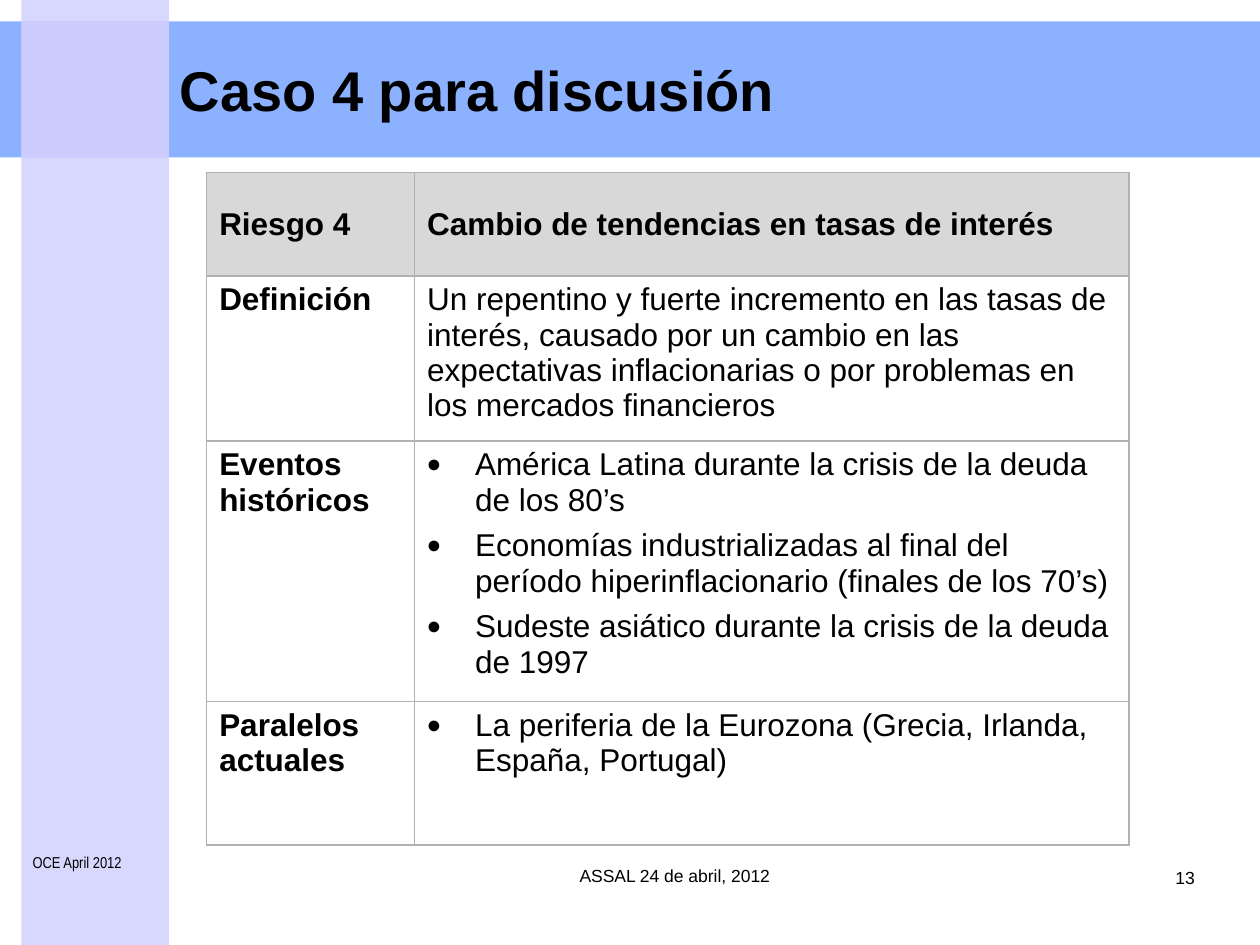
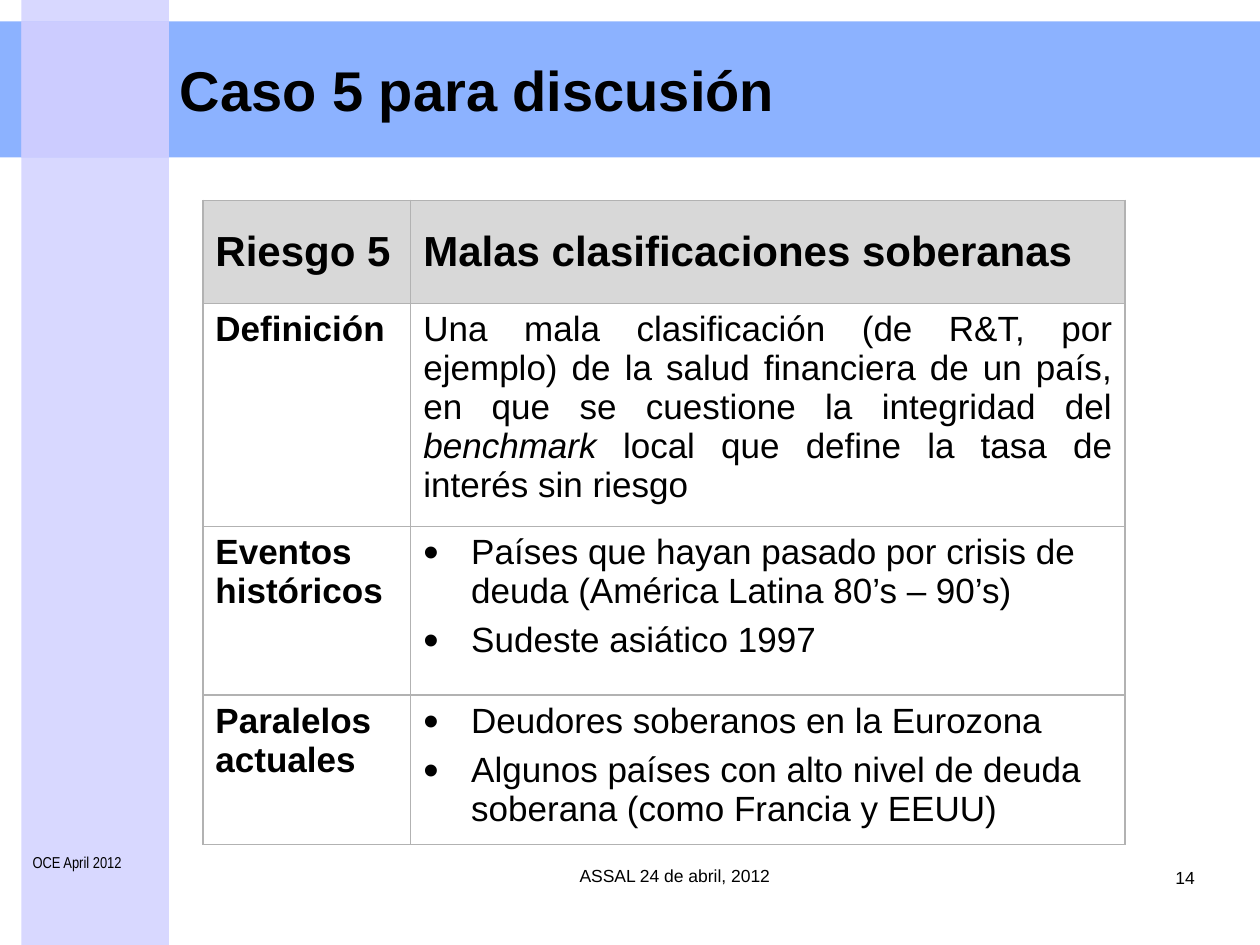
from dataclasses import dataclass

from lxml import etree
from pptx import Presentation
from pptx.dml.color import RGBColor
from pptx.enum.shapes import MSO_SHAPE
from pptx.enum.text import MSO_ANCHOR, PP_ALIGN
from pptx.oxml.ns import qn
from pptx.util import Inches, Pt

RECTANGLE = MSO_SHAPE.RECTANGLE
TOP, MIDDLE = MSO_ANCHOR.TOP, MSO_ANCHOR.MIDDLE
LEFT, CENTER, RIGHT, JUSTIFY = PP_ALIGN.LEFT, PP_ALIGN.CENTER, PP_ALIGN.RIGHT, PP_ALIGN.JUSTIFY


@dataclass(frozen=True)
class Theme:
    band: str = "6699FF"
    pillar: str = "CCCCFF"
    grid: str = "B2B2B2"
    ink: str = "000000"
    font: str = "Arial"
    narrow_font: str = "Arial Narrow"
    title_size: int = 32
    footer_size: int = 10
    event_size: int = 9


THEME = Theme()


def tint(fill, color, opacity=100):
    fill.solid()
    fill.fore_color.rgb = RGBColor.from_string(color)
    if opacity < 100:
        color_element = fill._xPr.find(qn("a:solidFill"))[0]
        etree.SubElement(color_element, qn("a:alpha"), val=str(opacity * 1000))


def write(frame, paragraphs, size, bold=False, align=LEFT, font=THEME.font, bullets=False):
    frame.word_wrap = True
    for index, runs in enumerate(paragraphs):
        paragraph = frame.paragraphs[0] if index == 0 else frame.add_paragraph()
        paragraph.alignment = align
        if bullets:
            paragraph.space_after = Pt(6)
            properties = paragraph._p.get_or_add_pPr()
            properties.set("marL", str(Inches(0.38)))
            properties.set("indent", str(-Inches(0.38)))
            etree.SubElement(properties, qn("a:buSzPct"), val="125000")
            etree.SubElement(properties, qn("a:buFont"), typeface=font)
            etree.SubElement(properties, qn("a:buChar"), char="•")
        for text, italic in [(runs, False)] if isinstance(runs, str) else runs:
            run = paragraph.add_run()
            run.text = text
            run.font.name = font
            run.font.size = Pt(size)
            run.font.bold = bold
            run.font.italic = italic
            run.font.color.rgb = RGBColor.from_string(THEME.ink)


cases = [
    {
        "number": 4,
        "page": 13,
        "corner": (1.64, 1.37),
        "heights": (0.82, 1.31, 1.94, 1.14),
        "header_size": 18,
        "body_size": 18,
        "definition_align": LEFT,
        "risk": "Cambio de tendencias en tasas de interés",
        "definition": "Un repentino y fuerte incremento en las tasas de interés, causado por un cambio "
                      "en las expectativas inflacionarias o por problemas en los mercados financieros",
        "events": [
            "América Latina durante la crisis de la deuda de los 80’s",
            "Economías industrializadas al final del período hiperinflacionario (finales de los 70’s)",
            "Sudeste asiático durante la crisis de la deuda de 1997",
        ],
        "parallels": ["La periferia de la Eurozona (Grecia, Irlanda, España, Portugal)"],
    },
    {
        "number": 5,
        "page": 14,
        "corner": (1.61, 1.59),
        "heights": (0.82, 1.65, 1.34, 1.14),
        "header_size": 24,
        "body_size": 20,
        "definition_align": JUSTIFY,
        "risk": "Malas clasificaciones soberanas",
        "definition": [
            ("Una mala clasificación (de R&T, por ejemplo) de la salud financiera de un país, "
             "en que se cuestione la integridad del ", False),
            ("benchmark ", True),
            ("local que define la tasa de interés sin riesgo", False),
        ],
        "events": [
            "Países que hayan pasado por crisis de deuda (América Latina 80’s – 90’s)",
            "Sudeste asiático 1997",
        ],
        "parallels": [
            "Deudores soberanos en la Eurozona",
            "Algunos países con alto nivel de deuda soberana (como Francia y EEUU)",
        ],
    },
]

bands = [
    ((0, 0.17, 10, 1.08), THEME.band, 75),
    ((0.17, 0, 1.17, 7.5), THEME.pillar, 75),
    ((0.17, 0.17, 1.17, 1.08), THEME.pillar, 100),
]
column_widths = (1.65, 5.67)

deck = Presentation()
deck.slide_width, deck.slide_height = Inches(10), Inches(7.5)

for case in cases:
    slide = deck.slides.add_slide(deck.slide_layouts[6])

    for place, color, opacity in bands:
        band = slide.shapes.add_shape(RECTANGLE, *map(Inches, place))
        band.shadow.inherit = False
        band.line.fill.background()
        tint(band.fill, color, opacity)

    labels = [
        ((1.33, 0.17, 8.5, 1.08), f"Caso {case['number']} para discusión", MIDDLE,
         {"size": THEME.title_size, "bold": True}),
        ((1.77, 6.82, 7.17, 0.5), "ASSAL 24 de abril, 2012", TOP,
         {"size": THEME.footer_size, "align": CENTER}),
        ((9, 6.83, 0.58, 0.5), str(case["page"]), TOP,
         {"size": THEME.footer_size, "align": RIGHT}),
        ((0.16, 6.72, 1.02, 0.42), "OCE April 2012", TOP,
         {"size": THEME.event_size, "font": THEME.narrow_font}),
    ]
    for place, text, anchor, style in labels:
        label = slide.shapes.add_textbox(*map(Inches, place)).text_frame
        label.vertical_anchor = anchor
        write(label, [text], **style)

    heights = case["heights"]
    risk_table = slide.shapes.add_table(
        len(heights), len(column_widths), *map(Inches, case["corner"]),
        Inches(sum(column_widths)), Inches(sum(heights))).table
    risk_table.first_row = risk_table.horz_banding = False
    for column, width in zip(risk_table.columns, column_widths):
        column.width = Inches(width)
    for row, height in zip(risk_table.rows, heights):
        row.height = Inches(height)

    for cell in risk_table.iter_cells():
        cell.margin_left = cell.margin_right = Inches(0.1)
        cell.margin_top = cell.margin_bottom = Inches(0.05)
        for side in ("lnL", "lnR", "lnT", "lnB"):
            border = etree.SubElement(cell._tc.get_or_add_tcPr(), qn(f"a:{side}"), w=str(Pt(1)))
            border_fill = etree.SubElement(border, qn("a:solidFill"))
            etree.SubElement(border_fill, qn("a:srgbClr"), val=THEME.grid)
        cell.fill.background()

    for column in range(len(column_widths)):
        header = risk_table.cell(0, column)
        header.vertical_anchor = MIDDLE
        tint(header.fill, THEME.grid, 50)

    body_size = case["body_size"]
    rows = [
        (f"Riesgo {case['number']}", [case["risk"]], case["header_size"], {"bold": True}),
        ("Definición", [case["definition"]], body_size, {"align": case["definition_align"]}),
        ("Eventos históricos", case["events"], body_size, {"bullets": True}),
        ("Paralelos actuales", case["parallels"], body_size, {"bullets": True}),
    ]
    for index, (heading, content, size, style) in enumerate(rows):
        write(risk_table.cell(index, 0).text_frame, [heading], size, bold=True)
        write(risk_table.cell(index, 1).text_frame, content, size, **style)

deck.save("out.pptx")
